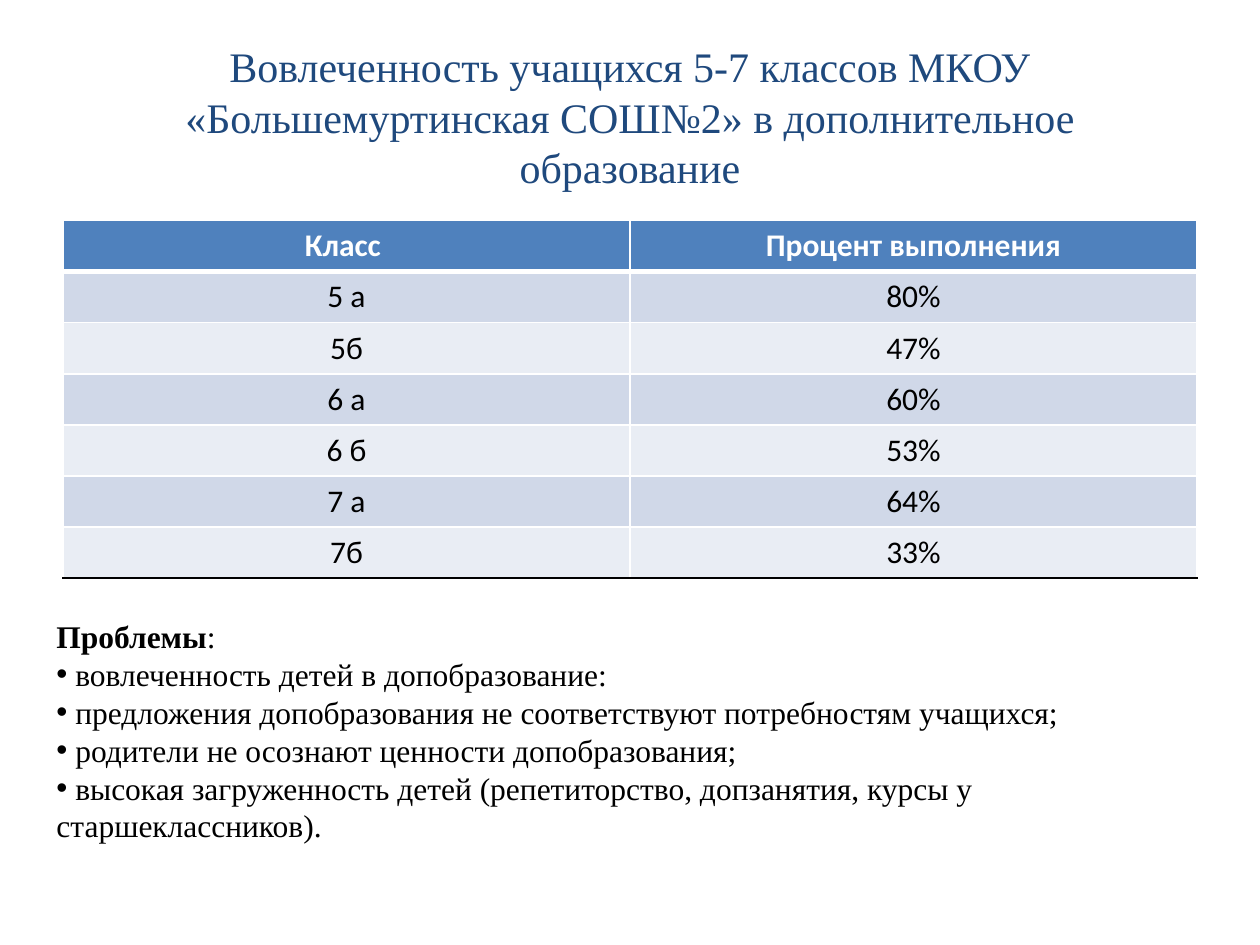
from lxml import etree
from pptx import Presentation, util as u
from pptx.dml.color import RGBColor
from pptx.enum import text
from pptx.oxml.ns import qn

COLORS = {
    "title": "1F497D",
    "header": "4F81BD",
    "band_dark": "D0D8E8",
    "band_light": "E9EDF4",
    "white": "FFFFFF",
    "black": "000000",
}
WIDTH, HEIGHT = 10, 7.5

TITLE = ("Вовлеченность учащихся 5-7 классов МКОУ "
         "«Большемуртинская СОШ№2» в дополнительное образование")
ROWS = [
    ("Класс ", "Процент выполнения"),
    ("5 а", "80%"),
    ("5б", "47%"),
    ("6 а", "60%"),
    ("6 б", "53%"),
    ("7 а", "64%"),
    ("7б", "33%"),
]
PROBLEMS = [
    "вовлеченность детей в допобразование:",
    "предложения допобразования не соответствуют потребностям учащихся;",
    "родители не осознают ценности допобразования;",
    "высокая загруженность детей (репетиторство, допзанятия, курсы у старшеклассников).",
]


class SlideBuilder:
    """Holds the style and the current slide; places are shares of its size."""

    serif, sans = "Times New Roman", "Calibri"
    title_size, body_size = 24, 18

    def __init__(self, deck):
        self.slide = deck.slides.add_slide(deck.slide_layouts[6])

    def place(self, left, top, width, height):
        return (u.Inches(left * WIDTH), u.Inches(top * HEIGHT),
                u.Inches(width * WIDTH), u.Inches(height * HEIGHT))

    def run(self, para, words, font, size, color, bold=False):
        span = para.add_run()
        span.text = words
        span.font.name = font
        span.font.size = u.Pt(size)
        span.font.bold = bold
        span.font.color.rgb = RGBColor.from_string(COLORS[color])

    def text_box(self, area):
        frame = self.slide.shapes.add_textbox(*self.place(*area)).text_frame
        frame.word_wrap = True
        return frame

    def title(self, words, area):
        frame = self.text_box(area)
        frame.vertical_anchor = text.MSO_ANCHOR.MIDDLE
        para = frame.paragraphs[0]
        para.alignment = text.PP_ALIGN.CENTER
        self.run(para, words, self.serif, self.title_size, "title")

    def bullet_list(self, heading, items, area):
        frame = self.text_box(area)
        para = frame.paragraphs[0]
        self.run(para, heading, self.serif, self.body_size, "black", bold=True)
        self.run(para, ":", self.serif, self.body_size, "black")
        for item in items:
            para = frame.add_paragraph()
            props = para._p.get_or_add_pPr()
            etree.SubElement(props, qn("a:buFont"), typeface="Arial")
            etree.SubElement(props, qn("a:buChar"), char="•")
            self.run(para, " " + item, self.serif, self.body_size, "black")

    def border(self, cell, side, color, points):
        props = cell._tc.get_or_add_tcPr()
        line = etree.SubElement(props, qn(f"a:ln{side}"), w=str(u.Pt(points)))
        fill = etree.SubElement(line, qn("a:solidFill"))
        etree.SubElement(fill, qn("a:srgbClr"), val=COLORS[color])

    def table(self, rows, area):
        grid = self.slide.shapes.add_table(
            len(rows), len(rows[0]), *self.place(*area)).table
        last = len(rows) - 1
        for r, values in enumerate(rows):
            is_header = r == 0
            band = "header" if is_header else "band_dark" if r % 2 else "band_light"
            for c, value in enumerate(values):
                cell = grid.cell(r, c)
                for side in "LR":
                    self.border(cell, side, "white", 1)
                self.border(cell, "T", "white", 3 if r == 1 else 1)
                self.border(cell, "B", "black" if r == last else "white",
                            3 if is_header else 1)
                cell.fill.solid()
                cell.fill.fore_color.rgb = RGBColor.from_string(COLORS[band])
                para = cell.text_frame.paragraphs[0]
                para.alignment = text.PP_ALIGN.CENTER
                self.run(para, value, self.sans, self.body_size,
                         "white" if is_header else "black", bold=is_header)


def main():
    deck = Presentation()
    deck.slide_width, deck.slide_height = u.Inches(WIDTH), u.Inches(HEIGHT)
    page = SlideBuilder(deck)
    page.title(TITLE, (0.05, 0.04, 0.9, 1.25 / HEIGHT))
    page.table(ROWS, (0.05, 1.75 / HEIGHT, 0.9, 2.84 / HEIGHT))
    page.bullet_list("Проблемы", PROBLEMS,
                     (0.035, 4.85 / HEIGHT, 0.866, 1.92 / HEIGHT))
    deck.save("out.pptx")


if __name__ == "__main__":
    main()
